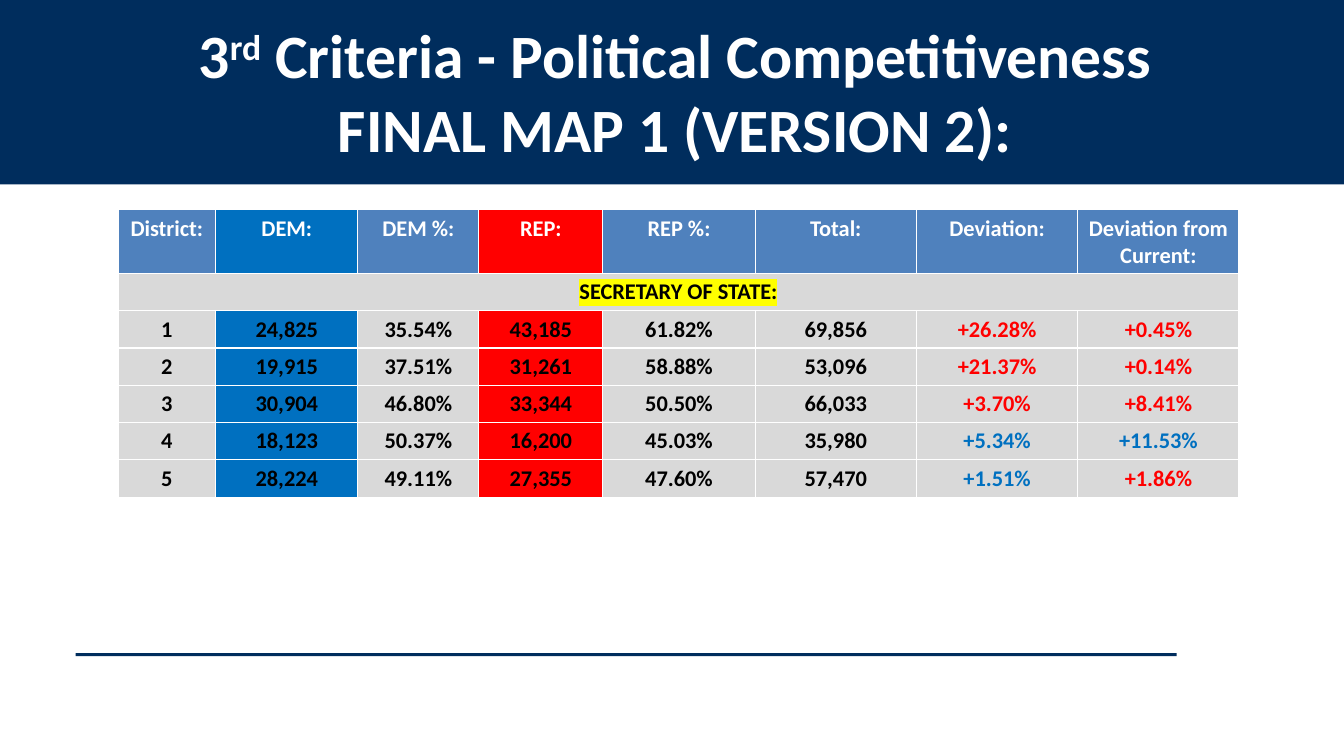
from lxml.etree import SubElement
from pptx import Presentation
from pptx.dml.color import RGBColor
from pptx.enum.shapes import MSO_SHAPE as Shape
from pptx.enum.text import MSO_ANCHOR as Anchor, PP_ALIGN as Align
from pptx.oxml.ns import qn
from pptx.util import Inches, Pt

NAVY = RGBColor(0x00, 0x2D, 0x5D)
WHITE = RGBColor(0xFF, 0xFF, 0xFF)
BLACK = RGBColor(0x00, 0x00, 0x00)
HEADER_BLUE = RGBColor(0x4F, 0x81, 0xBD)
GREY = RGBColor(0xD9, 0xD9, 0xD9)
DEM_BLUE = RGBColor(0x00, 0x70, 0xC0)
REP_RED = RGBColor(0xFF, 0x00, 0x00)
YELLOW = RGBColor(0xFF, 0xFF, 0x00)

HEADERS = ["District:", "DEM:", "DEM %:", "REP:", "REP %:", "Total:",
           "Deviation:", "Deviation from Current:"]
COLUMN_WIDTHS = [0.97, 1.41, 1.2, 1.23, 1.51, 1.6, 1.6, 1.6]
PARTY_FILLS = {1: DEM_BLUE, 3: REP_RED}
DEVIATION_COLUMN = 6
HEADER_HEIGHT, ROW_HEIGHT = 0.63, 0.37

# Values of each district, then the colours of its two deviations
DISTRICTS = [
    ("1 24,825 35.54% 43,185 61.82% 69,856 +26.28% +0.45%", (REP_RED, REP_RED)),
    ("2 19,915 37.51% 31,261 58.88% 53,096 +21.37% +0.14%", (REP_RED, REP_RED)),
    ("3 30,904 46.80% 33,344 50.50% 66,033 +3.70% +8.41%", (REP_RED, REP_RED)),
    ("4 18,123 50.37% 16,200 45.03% 35,980 +5.34% +11.53%", (DEM_BLUE, DEM_BLUE)),
    ("5 28,224 49.11% 27,355 47.60% 57,470 +1.51% +1.86%", (DEM_BLUE, REP_RED)),
]


def add_run(paragraph, text, size, color):
    paragraph.alignment = Align.CENTER
    run = paragraph.add_run()
    run.text = text
    for name, value in {"size": Pt(size), "name": "Calibri", "bold": True}.items():
        setattr(run.font, name, value)
    run.font.color.rgb = color
    return run


def add_bar(slide, left, top, width, height):
    bar = slide.shapes.add_shape(Shape.RECTANGLE, Inches(left), Inches(top),
                                 Inches(width), Inches(height))
    bar.shadow.inherit = False
    bar.fill.solid()
    bar.fill.fore_color.rgb = NAVY
    bar.line.fill.background()


def add_title(slide, left, top, width, height):
    box = slide.shapes.add_textbox(Inches(left), Inches(top), Inches(width), Inches(height))
    frame = box.text_frame
    frame.word_wrap = True
    frame.vertical_anchor = Anchor.TOP
    first, second = frame.paragraphs[0], frame.add_paragraph()
    for paragraph in (first, second):
        properties = paragraph._p.get_or_add_pPr()
        properties.set("marL", str(Inches(0.5)))
        properties.set("indent", "0")
    add_run(first, "3", 44, WHITE)
    ordinal = add_run(first, "rd", 44, WHITE)
    ordinal.font._element.set("baseline", "30000")
    add_run(first, " Criteria - Political Competitiveness", 44, WHITE)
    add_run(second, "FINAL MAP 1 (VERSION 2):", 44, WHITE)


def fill_cell(cell, text, fill, color):
    cell.fill.solid()
    cell.fill.fore_color.rgb = fill
    return add_run(cell.text_frame.paragraphs[0], text, 16, color)


def highlight(run, color):
    properties = run.font._element
    mark = SubElement(properties, qn("a:highlight"))
    SubElement(mark, qn("a:srgbClr")).set("val", str(color))
    properties.find(qn("a:solidFill")).addnext(mark)


def add_results_table(slide, left, top, width, height):
    frame = slide.shapes.add_table(len(DISTRICTS) + 2, len(HEADERS), Inches(left),
                                   Inches(top), Inches(width), Inches(height))
    table = frame.table
    table.horz_banding = False
    for column, column_width in zip(table.columns, COLUMN_WIDTHS):
        column.width = Inches(column_width)
    for index, row in enumerate(table.rows):
        row.height = Inches(ROW_HEIGHT if index else HEADER_HEIGHT)

    # Column headings
    for column, text in enumerate(HEADERS):
        fill_cell(table.cell(0, column), text, PARTY_FILLS.get(column, HEADER_BLUE), WHITE)

    # Office heading across all columns
    office = table.cell(1, 0)
    office.merge(table.cell(1, len(HEADERS) - 1))
    highlight(fill_cell(office, "SECRETARY OF STATE:", GREY, BLACK), YELLOW)

    # District results
    for row, (values, deviation_colors) in enumerate(DISTRICTS, start=2):
        colors = [BLACK] * DEVIATION_COLUMN + list(deviation_colors)
        for column, (text, color) in enumerate(zip(values.split(), colors)):
            fill_cell(table.cell(row, column), text, PARTY_FILLS.get(column, GREY), color)


def main():
    presentation = Presentation()
    presentation.slide_width = Inches(13.33)
    presentation.slide_height = Inches(7.5)
    slide = presentation.slides.add_slide(presentation.slide_layouts[6])
    add_bar(slide, 0, -0.03, 13.33, 1.86)
    add_bar(slide, 0.75, 6.48, 10.92, 0.03)
    add_title(slide, 0.56, 0.12, 11.78, 2.32)
    add_results_table(slide, 1.17, 2.08, sum(COLUMN_WIDTHS),
                      HEADER_HEIGHT + ROW_HEIGHT * (len(DISTRICTS) + 1))
    presentation.save("out.pptx")


if __name__ == "__main__":
    main()
